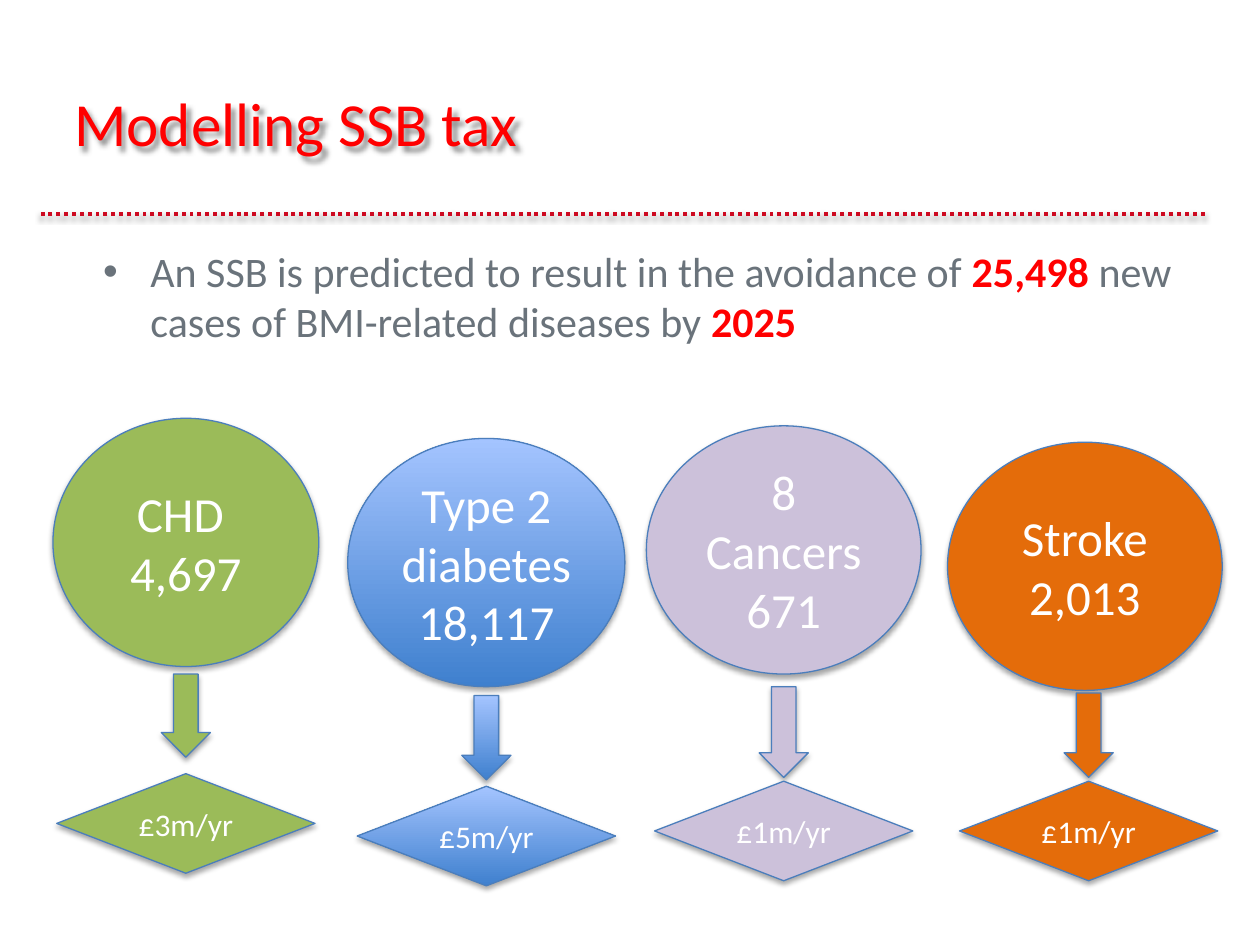
from dataclasses import dataclass

from lxml import etree
from pptx import Presentation
from pptx import util as u
from pptx.dml.color import RGBColor
from pptx.enum import dml, shapes, text
from pptx.oxml import ns

# The slide is a grid of 100 columns by 75 rows
WIDTH, HEIGHT = u.Inches(10), u.Inches(7.5)
COLUMNS, ROWS = 100, 75
FONT = "Calibri"
RED, GREY, WHITE, OUTLINE = "FF0000", "6A737B", "FFFFFF", "4B7EBC"
BLUE_GRADIENT = ("3F80CE", "A4C4FF")


@dataclass
class Disease:
    box: tuple      # left, top, width, height of the whole column
    fill: object    # one colour, or the two ends of a gradient
    lines: tuple
    cost: str
    arrow: tuple    # top within the box, height
    shift: float = 0  # offset of arrow and diamond from the circle's axis


DISEASES = [
    Disease((4.2, 33.2, 21.1, 36.1), "9BBB59", ("CHD ", "4,697"), "£3m/yr", (20.3, 6.6)),
    Disease((27.6, 34.8, 22, 35.5), BLUE_GRADIENT, ("Type 2 diabetes", "18,117"),
            "£5m/yr", (20.4, 6.7)),
    Disease((51.3, 33.8, 21.8, 36.1), "CCC1DA", ("8 Cancers", "671"), "£1m/yr", (20.7, 7.2)),
    Disease((75.2, 35.1, 21.8, 34.8), "E46C0A", ("Stroke", "2,013"), "£1m/yr",
            (19.9, 6.7), 0.3),
]


def colour(value):
    return RGBColor.from_string(value)


def x(columns):
    return round(WIDTH * columns / COLUMNS)


def y(rows):
    return round(HEIGHT * rows / ROWS)


def grid(left, top, width, height):
    return x(left), y(top), x(width), y(height)


def add_shadow(part, alpha=35, blur=3.1, distance=1.8, angle=90):
    properties = part._element.spPr
    effects = properties.find(ns.qn("a:effectLst"))
    if effects is None:
        effects = etree.SubElement(properties, ns.qn("a:effectLst"))
    shadow = etree.SubElement(
        effects, ns.qn("a:outerShdw"), blurRad=str(u.Pt(blur)), dist=str(u.Pt(distance)),
        dir=str(angle * 60000), rotWithShape="0")
    black = etree.SubElement(shadow, ns.qn("a:srgbClr"), val="000000")
    etree.SubElement(black, ns.qn("a:alpha"), val=str(alpha * 1000))


def style_font(font, size, value, bold=False):
    font.name, font.size, font.bold = FONT, u.Pt(size), bold
    font.color.rgb = colour(value)


def add_title(page, box, wording):
    title = page.shapes.add_textbox(*grid(*box))
    frame = title.text_frame
    frame.word_wrap = True
    frame.margin_left = frame.margin_right = frame.margin_top = frame.margin_bottom = 0
    frame.text = wording
    style_font(frame.paragraphs[0].runs[0].font, 35, RED)
    title.shadow.inherit = False
    add_shadow(title, alpha=43, blur=3, distance=3, angle=45)


def add_rule(page, left, right, row):
    rule = page.shapes.add_connector(shapes.MSO_CONNECTOR.STRAIGHT,
                                     x(right), y(row), x(left), y(row))
    rule.line.color.rgb = colour("CD0920")
    rule.line.width = u.Pt(2.25)
    rule.line.dash_style = dml.MSO_LINE.ROUND_DOT
    add_shadow(rule, alpha=38, distance=1.6)


def add_bullet(page, box, pieces):
    frame = page.shapes.add_textbox(*grid(*box)).text_frame
    frame.word_wrap = True
    para = frame.paragraphs[0]
    properties = para._p.get_or_add_pPr()
    properties.set("marL", str(x(3.75)))
    properties.set("indent", str(-x(3.75)))
    etree.SubElement(properties, ns.qn("a:buFont"), typeface="Arial")
    etree.SubElement(properties, ns.qn("a:buChar"), char="•")
    for wording, strong in pieces:
        span = para.add_run()
        span.text = wording
        style_font(span.font, 24, RED if strong else GREY, strong)


def add_figure(page, kind, box, fill, lines=(), size=18):
    figure = page.shapes.add_shape(kind, *grid(*box))
    if isinstance(fill, str):
        figure.fill.solid()
        figure.fill.fore_color.rgb = colour(fill)
    else:
        figure.fill.gradient()
        figure.fill.gradient_angle = 90
        for stop, position, value in zip(figure.fill.gradient_stops, (0, 1), fill):
            stop.position = position
            stop.color.rgb = colour(value)
    figure.line.color.rgb = colour(OUTLINE)
    figure.line.width = u.Pt(0.75)
    figure.shadow.inherit = False
    add_shadow(figure)
    if lines:
        frame = figure.text_frame
        frame.word_wrap = True
        frame.vertical_anchor = text.MSO_ANCHOR.MIDDLE
        frame.text = "\n".join(lines)
        for para in frame.paragraphs:
            para.alignment = text.PP_ALIGN.CENTER
            style_font(para.runs[0].font, size, WHITE)


def add_disease(page, disease):
    left, top, width, height = disease.box
    axis = left + width / 2 + disease.shift
    kinds = shapes.MSO_SHAPE
    # Circle with the cases avoided
    add_figure(page, kinds.OVAL, (left, top, width, 19.7), disease.fill, disease.lines, 28)
    # Arrow down to the saving
    arrow_top, arrow_height = disease.arrow
    add_figure(page, kinds.DOWN_ARROW, (axis - 1.95, top + arrow_top, 3.9, arrow_height),
               disease.fill)
    # Diamond with the yearly saving, at the foot of the box
    add_figure(page, kinds.FLOWCHART_DECISION,
               (axis - 10.25, top + height - 7.9, 20.5, 7.9), disease.fill, (disease.cost,))


def main():
    deck = Presentation()
    deck.slide_width, deck.slide_height = WIDTH, HEIGHT
    page = deck.slides.add_slide(deck.slide_layouts[6])
    # Heading
    add_rule(page, 3.2, 95.6, 17)
    add_title(page, (5.9, 6.8, 91.6, 7.9), "Modelling SSB tax")
    # Key message
    add_bullet(page, (7.2, 19, 88.2, 11), [
        ("An SSB is predicted to result in the avoidance of ", False),
        ("25,498", True),
        (" new cases of BMI-related diseases by ", False),
        ("2025", True),
    ])
    # Four diseases
    for disease in DISEASES:
        add_disease(page, disease)
    deck.save("out.pptx")


if __name__ == "__main__":
    main()
